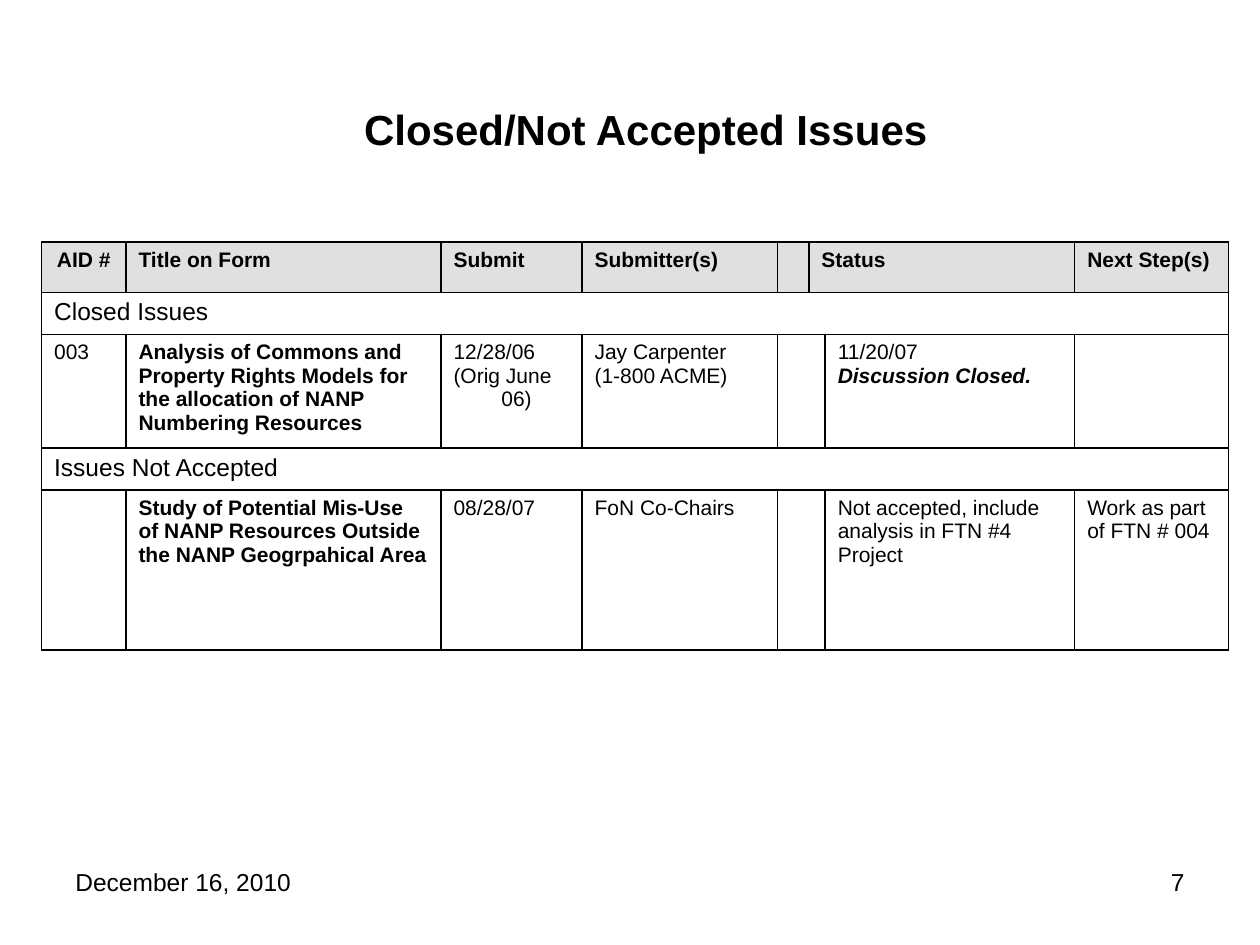
import dataclasses

import lxml.etree
import pptx
import pptx.dml.color
import pptx.enum.text
import pptx.oxml.ns
import pptx.util

Inches = pptx.util.Inches
Pt = pptx.util.Pt
RGB = pptx.dml.color.RGBColor
ALIGN = pptx.enum.text.PP_ALIGN
ANCHOR = pptx.enum.text.MSO_ANCHOR


@dataclasses.dataclass(frozen=True)
class Theme:
    """Colours, font and type sizes of the slide."""
    font: str = "Arial"
    ink: str = "000000"
    paper: str = "FFFFFF"
    header: str = "E0E0E0"
    title: int = 24
    section: int = 14
    footer: int = 14
    body: int = 12
    border: int = 1


THEME = Theme()
COLUMNS = [0.67, 2.5, 1.12, 1.55, 0.25, 0.13, 1.98, 1.22]
ROWS = [0.38, 0.32, 0.9, 0.32, 1.27]
HEADER = {0: "AID #", 1: "Title on Form", 2: "Submit", 3: "Submitter(s)",
          5: "Status", 7: "Next Step(s)"}
SECTIONS = {1: "Closed Issues", 3: "Issues Not Accepted"}
ISSUES = {
    2: {0: ["003"],
        1: ["Analysis of Commons and Property Rights Models for the allocation "
            "of NANP Numbering Resources"],
        2: ["12/28/06", "(Orig June 06)"],
        3: ["Jay Carpenter", "(1-800 ACME)"],
        6: ["11/20/07"]},
    4: {1: ["Study of Potential Mis-Use of NANP Resources Outside the NANP "
            "Geogrpahical Area"],
        2: ["08/28/07"],
        3: ["FoN Co-Chairs"],
        6: ["Not accepted, include analysis in FTN #4 Project"],
        7: ["Work as part of FTN # 004"]},
}
HANGING = {0, 2, 3}


def add_run(p, text, size, bold=False, italic=False):
    """Add one styled run to a paragraph."""
    r = p.add_run()
    r.text = text
    r.font.name = THEME.font
    r.font.size = Pt(size)
    r.font.bold = bold
    r.font.italic = italic
    r.font.color.rgb = RGB.from_string(THEME.ink)


def hang(p):
    """Give a paragraph a hanging indent."""
    pPr = p._p.get_or_add_pPr()
    pPr.set("marL", str(Inches(0.38)))
    pPr.set("indent", str(-Inches(0.38)))


def write_cell(cell, lines, size, bold=False, hanging=False):
    """Write one paragraph per line into a cell."""
    tf = cell.text_frame
    for i, line in enumerate(lines):
        p = tf.add_paragraph() if i else tf.paragraphs[0]
        if hanging:
            hang(p)
        add_run(p, line, size, bold)


def style_cell(cell, color):
    """Draw the four borders of a cell and fill it."""
    qn = pptx.oxml.ns.qn
    tcPr = cell._tc.get_or_add_tcPr()
    for side in ("a:lnL", "a:lnR", "a:lnT", "a:lnB"):
        ln = lxml.etree.SubElement(tcPr, qn(side), w=str(Pt(THEME.border)))
        fill = lxml.etree.SubElement(ln, qn("a:solidFill"))
        lxml.etree.SubElement(fill, qn("a:srgbClr"), val=THEME.ink)
    cell.fill.solid()
    cell.fill.fore_color.rgb = RGB.from_string(color)


def add_label(slide, box, text, size, align=ALIGN.LEFT, anchor=ANCHOR.TOP, bold=False):
    """Place a one-line text box."""
    tf = slide.shapes.add_textbox(*map(Inches, box)).text_frame
    tf.word_wrap = True
    tf.vertical_anchor = anchor
    p = tf.paragraphs[0]
    p.alignment = align
    add_run(p, text, size, bold)


def add_issue_table(slide, box):
    """Place the table of closed and not accepted issues."""
    shape = slide.shapes.add_table(len(ROWS), len(COLUMNS), *map(Inches, box))
    table = shape.table
    table.first_row = table.horz_banding = False
    for column, width in zip(table.columns, COLUMNS):
        column.width = Inches(width)
    for row, height in zip(table.rows, ROWS):
        row.height = Inches(height)
    for i in range(len(ROWS)):
        for j in range(len(COLUMNS)):
            style_cell(table.cell(i, j), THEME.paper if i else THEME.header)

    table.cell(0, 5).merge(table.cell(0, 6))
    for j, text in HEADER.items():
        write_cell(table.cell(0, j), [text], THEME.body, bold=True, hanging=True)
    table.cell(0, 0).text_frame.paragraphs[0].alignment = ALIGN.CENTER

    for i, text in SECTIONS.items():
        table.cell(i, 0).merge(table.cell(i, len(COLUMNS) - 1))
        write_cell(table.cell(i, 0), [text], THEME.section)

    for i, issue in ISSUES.items():
        table.cell(i, 4).merge(table.cell(i, 5))
        for j, lines in issue.items():
            write_cell(table.cell(i, j), lines, THEME.body, j == 1, j in HANGING)
    p = table.cell(2, 6).text_frame.paragraphs[0]
    p.add_line_break()
    add_run(p, "Discussion Closed.", THEME.body, bold=True, italic=True)


def add_footer(slide, box):
    """Place the date at the left and the page number at the right."""
    left, top, width, height = box
    part = 2.33
    add_label(slide, (left, top, part, height), "December 16, 2010", THEME.footer)
    add_label(slide, (left + width - part, top, part, height), "7", THEME.footer,
              ALIGN.RIGHT)


def main():
    """Build the slide and save it."""
    prs = pptx.Presentation()
    prs.slide_width, prs.slide_height = Inches(10), Inches(7.5)
    slide = prs.slides.add_slide(prs.slide_layouts[6])
    add_label(slide, (0.5, 0.67, 9.25, 0.7), "Closed/Not Accepted Issues",
              THEME.title, ALIGN.CENTER, ANCHOR.MIDDLE, bold=True)
    add_issue_table(slide, (0.33, 1.92, sum(COLUMNS), sum(ROWS)))
    add_footer(slide, (0.5, 6.83, 9, 0.52))
    prs.save("out.pptx")


if __name__ == "__main__":
    main()
